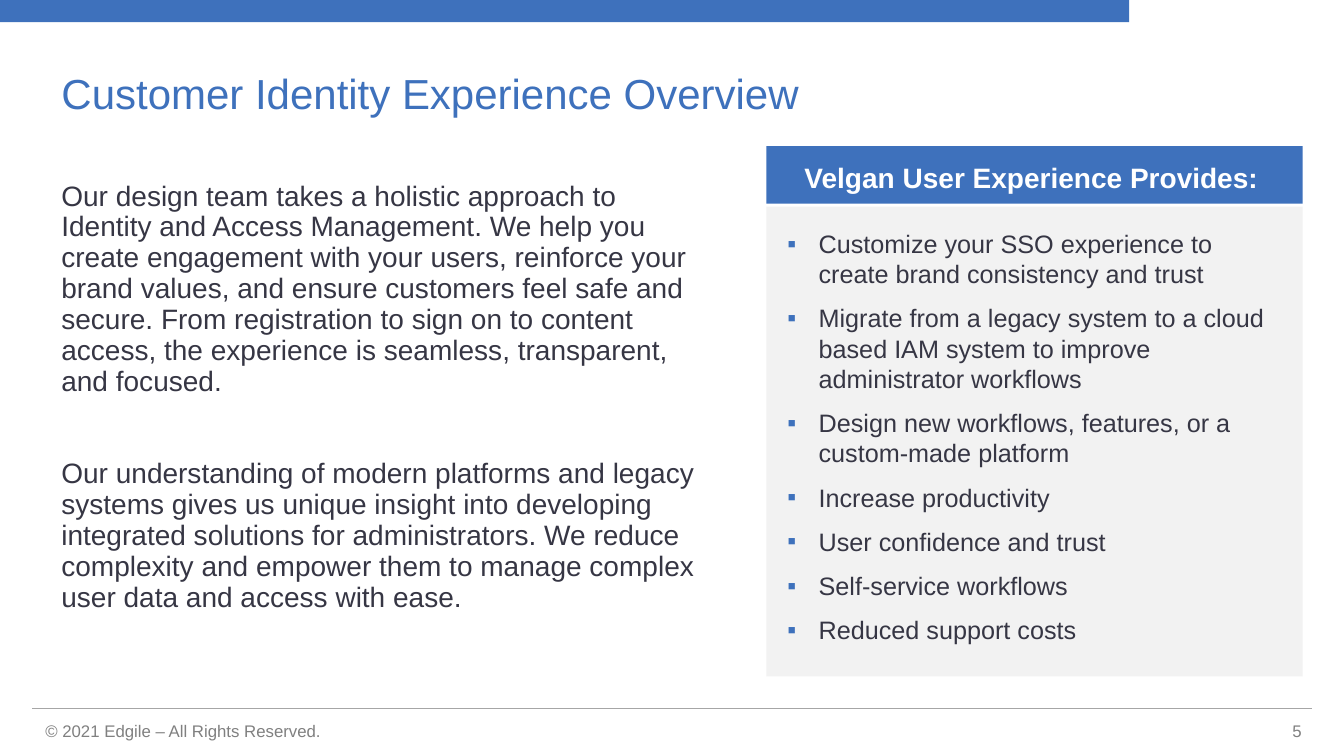
from dataclasses import dataclass

import lxml.etree
import pptx
import pptx.dml.color
import pptx.enum.shapes
import pptx.enum.text
import pptx.oxml.ns
import pptx.util

Inches = pptx.util.Inches
Pt = pptx.util.Pt
Align = pptx.enum.text.PP_ALIGN
Anchor = pptx.enum.text.MSO_ANCHOR
qn = pptx.oxml.ns.qn


@dataclass
class Theme:
    face: str = "Arial"
    blue: str = "3E71BC"
    panel: str = "F2F2F2"
    ink: str = "363644"
    gray: str = "808080"
    rule: str = "A6A6A6"
    white: str = "FFFFFF"
    title: int = 30
    body: int = 20
    item: int = 18
    foot: int = 12


theme = Theme()


def color(code):
    return pptx.dml.color.RGBColor.from_string(code)


def style(para, text, size, code, bold=False):
    """Set the text of a paragraph and its font."""
    para.text = text
    font = para.font
    font.name, font.size, font.bold = theme.face, Pt(size), bold
    font.color.rgb = color(code)


deck = pptx.Presentation()
deck.slide_width, deck.slide_height = Inches(13.33), Inches(7.5)
slide = deck.slides.add_slide(deck.slide_layouts[5])
shapes = slide.shapes

# Title
title = shapes.title
title.left, title.top = Inches(0.51), Inches(0.67)
title.width, title.height = Inches(12.32), Inches(0.56)
title.text_frame.vertical_anchor = Anchor.MIDDLE
title.text_frame.auto_size = pptx.enum.text.MSO_AUTO_SIZE.NONE
para = title.text_frame.paragraphs[0]
style(para, "Customer Identity Experience Overview", theme.title, theme.blue)
para.alignment = Align.LEFT
para.line_spacing = 0.9

# Top bar, heading band and list panel
for left, top, width, height, code in (
    (0, 0, 11.2, 0.22, theme.blue),
    (7.6, 1.45, 5.32, 0.57, theme.blue),
    (7.6, 2.05, 5.32, 4.66, theme.panel),
):
    block = shapes.add_shape(
        pptx.enum.shapes.MSO_SHAPE.RECTANGLE,
        Inches(left), Inches(top), Inches(width), Inches(height))
    block.shadow.inherit = False
    block.fill.solid()
    block.fill.fore_color.rgb = color(code)
    block.line.fill.background()

# Footer
rule = shapes.add_connector(
    pptx.enum.shapes.MSO_CONNECTOR.STRAIGHT,
    Inches(0.32), Inches(7.03), Inches(13.01), Inches(7.03))
rule.line.color.rgb = color(theme.rule)
rule.line.width = Pt(0.75)
lxml.etree.SubElement(rule._element.spPr, qn("a:effectLst"))

for text, left, top, width, height, inset, align in (
    ("© 2021 Edgile – All Rights Reserved.",
     0.32, 7.08, 3.07, 0.34, 0.13, Align.LEFT),
    ("5", 12.6, 7.1, 0.41, 0.3, 0.1, Align.RIGHT),
):
    box = shapes.add_textbox(
        Inches(left), Inches(top), Inches(width), Inches(height))
    frame = box.text_frame
    frame.word_wrap = False
    frame.vertical_anchor = Anchor.MIDDLE
    frame.margin_left = frame.margin_right = Inches(inset)
    style(frame.paragraphs[0], text, theme.foot, theme.gray)
    frame.paragraphs[0].alignment = align

# Overview text
story = (
    "Our design team takes a holistic approach to Identity and Access "
    "Management. We help you create engagement with your users, reinforce "
    "your brand values, and ensure customers feel safe and secure. From "
    "registration to sign on to content access, the experience is seamless, "
    "transparent, and focused.",
    "Our understanding of modern platforms and legacy systems gives us unique "
    "insight into developing integrated solutions for administrators. We "
    "reduce complexity and empower them to manage complex user data and "
    "access with ease.",
)
box = shapes.add_textbox(Inches(0.51), Inches(1.75), Inches(6.59), Inches(4.94))
frame = box.text_frame
frame.word_wrap = True
for i, text in enumerate(story):
    para = frame.add_paragraph() if i else frame.paragraphs[0]
    style(para, text, theme.body, theme.ink)
    para.line_spacing = 0.92
    if i:
        para.space_before = Pt(43.5)

# Heading and list
items = (
    "Customize your SSO experience to create brand consistency and trust",
    "Migrate from a legacy system to a cloud based IAM system to improve "
    "administrator workflows",
    "Design new workflows, features, or a custom-made platform",
    "Increase productivity",
    "User confidence and trust",
    "Self-service workflows",
    "Reduced support costs",
)
box = shapes.add_textbox(Inches(7.81), Inches(1.59), Inches(4.84), Inches(5.24))
frame = box.text_frame
frame.word_wrap = True
frame.margin_left = frame.margin_right = 0
frame.margin_top = frame.margin_bottom = 0
para = frame.paragraphs[0]
style(para, "Velgan User Experience Provides:", theme.body, theme.white, True)
para.alignment = Align.CENTER
para.space_after = Pt(24.5)

for text in items:
    para = frame.add_paragraph()
    para.space_after = Pt(10)
    props = para._p.get_or_add_pPr()
    props.set("marL", str(Inches(0.31)))
    props.set("indent", str(-Inches(0.31)))
    tint = lxml.etree.SubElement(props, qn("a:buClr"))
    lxml.etree.SubElement(tint, qn("a:srgbClr"), val=theme.blue)
    lxml.etree.SubElement(props, qn("a:buFont"), typeface=theme.face)
    lxml.etree.SubElement(props, qn("a:buChar"), char="▪")
    style(para, text, theme.item, theme.ink)

deck.save("out.pptx")
